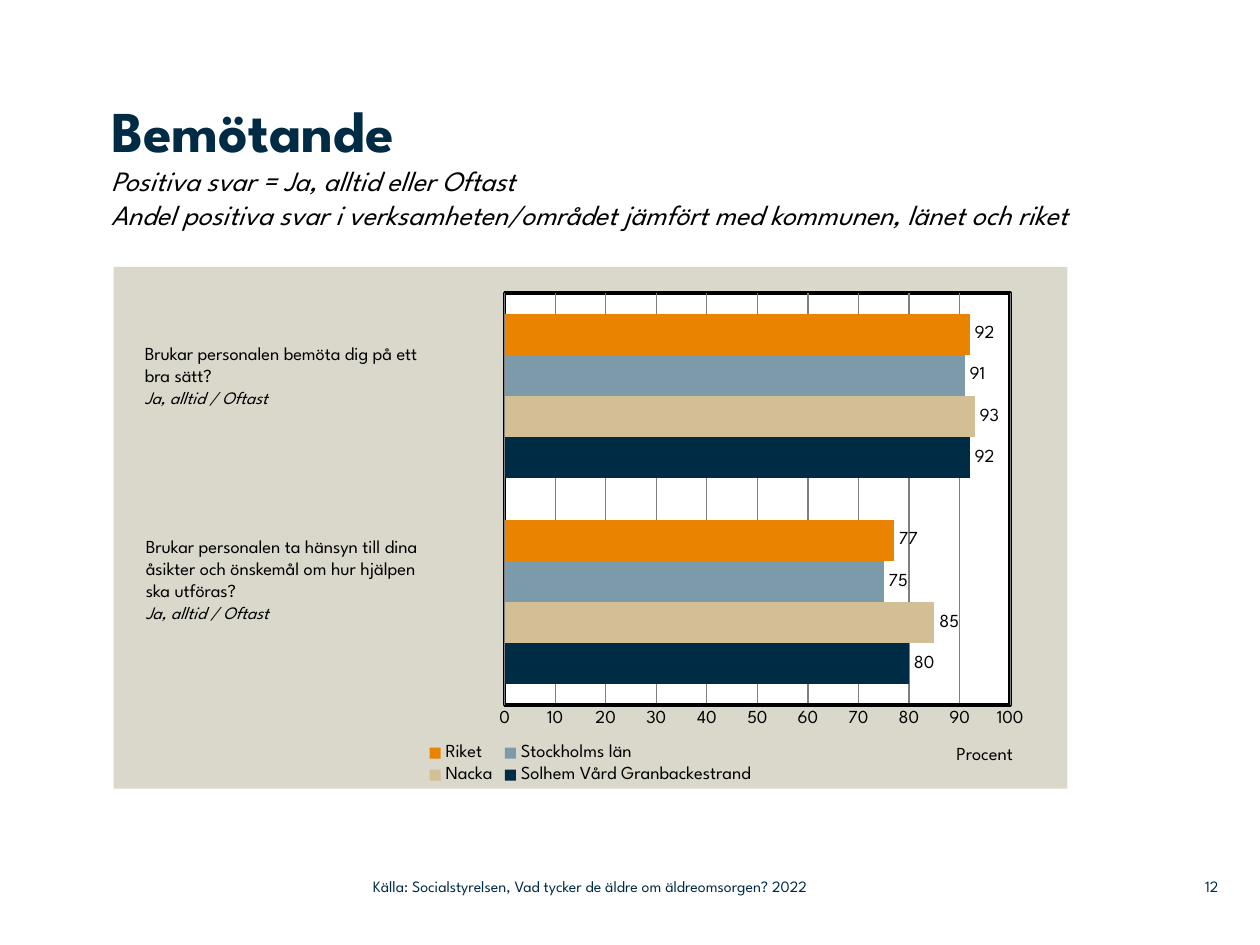
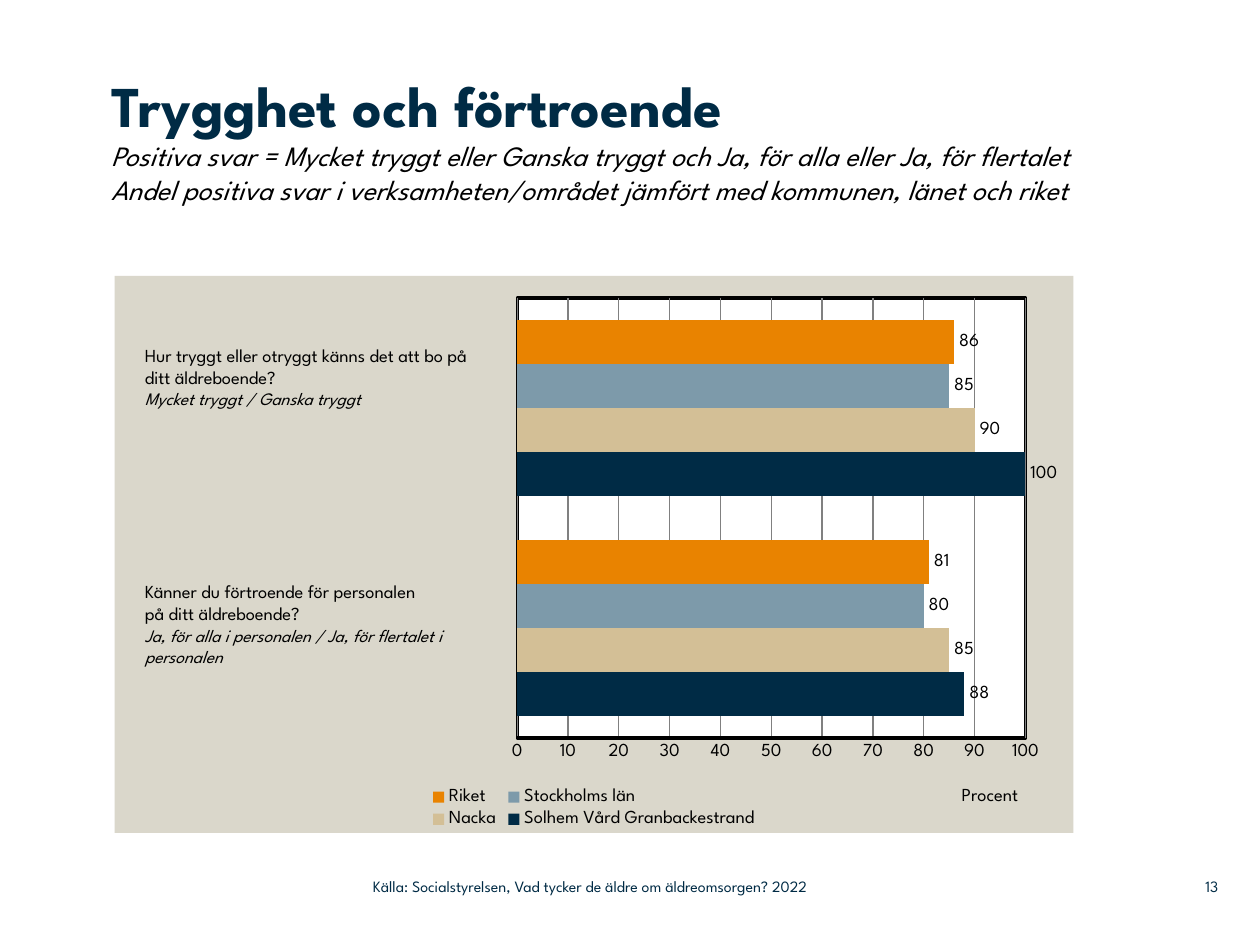
import pptx
import pptx.chart.data
import pptx.dml.color
import pptx.enum.chart
import pptx.enum.text
import pptx.oxml
import pptx.oxml.ns
import pptx.util

Cm = pptx.util.Cm
Pt = pptx.util.Pt
RGBColor = pptx.dml.color.RGBColor
qn = pptx.oxml.ns.qn
Anchor = pptx.enum.text.MSO_ANCHOR
Align = pptx.enum.text.PP_ALIGN

FONT = "League Spartan"
NAVY = RGBColor(0x00, 0x2B, 0x45)
BLACK = RGBColor(0x00, 0x00, 0x00)
WHITE = RGBColor(0xFF, 0xFF, 0xFF)
GREY = RGBColor(0x80, 0x80, 0x80)
STONE = RGBColor(0xDA, 0xD7, 0xCB)
SAND = RGBColor(0xD3, 0xBF, 0x96)
STEEL = RGBColor(0x7D, 0x9A, 0xAA)
ORANGE = RGBColor(0xE9, 0x83, 0x00)

SERIES = (
    ("Solhem Vård Granbackestrand", NAVY),
    ("Nacka", SAND),
    ("Stockholms län", STEEL),
    ("Riket", ORANGE),
)
COMPARISON = "Andel positiva svar i verksamheten/området jämfört med kommunen, länet och riket"
SOURCE = "Källa: Socialstyrelsen, Vad tycker de äldre om äldreomsorgen? 2022"
AXIS_TITLE_PLACE = (0.88, 0.91)


def set_font(font, size, color=BLACK, bold=False, italic=False):
    font.name = FONT
    font.size = Pt(size)
    font.color.rgb = color
    font.bold = bold
    font.italic = italic


def add_text_box(slide, box, margins=True, anchor=Anchor.TOP):
    """Return the empty text frame of a new box; box is left, top, width, height in cm."""
    frame = slide.shapes.add_textbox(*map(Cm, box)).text_frame
    frame.word_wrap = True
    frame.vertical_anchor = anchor
    if not margins:
        frame.margin_left = frame.margin_right = 0
        frame.margin_top = frame.margin_bottom = 0
    return frame


def add_text(frame, text, align=Align.LEFT, **font_format):
    """Write text as the next paragraph of the frame."""
    first = frame.paragraphs[0]
    paragraph = frame.add_paragraph() if first.runs else first
    paragraph.alignment = align
    run = paragraph.add_run()
    run.text = text
    set_font(run.font, **font_format)


def add_title(slide, box, title, positive_answers):
    frame = add_text_box(slide, box, margins=False)
    add_text(frame, title, size=33, color=NAVY, bold=True)
    for line in (positive_answers, COMPARISON):
        add_text(frame, line, size=16, italic=True)


def add_question(slide, box, lines, answers):
    frame = add_text_box(slide, box)
    for line in lines:
        add_text(frame, line, size=10.5)
    add_text(frame, answers, size=10, italic=True)


def add_footer(slide, number):
    source = add_text_box(slide, (7.52, 17.5, 11.25, 0.74), margins=False, anchor=Anchor.MIDDLE)
    add_text(source, SOURCE, size=9, color=NAVY)
    page = add_text_box(slide, (23.37, 17.5, 1.19, 0.74), margins=False, anchor=Anchor.MIDDLE)
    add_text(page, str(number), align=Align.RIGHT, size=9, color=NAVY)


def set_layout(element, target=None, **fractions):
    """Place a chart part by fractions of the chart area."""
    layout = element.find(qn("c:layout"))
    if layout is None:
        layout = element.makeelement(qn("c:layout"), {})
        element.insert(0 if element.find(qn("c:tx")) is None else 1, layout)
    settings = {"layoutTarget": target} if target else {}
    settings.update({f"{key}Mode": "edge" for key in ("x", "y")})
    settings.update(fractions)
    manual = layout.makeelement(qn("c:manualLayout"), {})
    layout.append(manual)
    for name, value in settings.items():
        manual.append(manual.makeelement(qn(f"c:{name}"), {"val": str(value)}))


def area_format(fill, line=None):
    """Return shape properties for a chart area, with a 2 pt line or none."""
    outline = (
        f'<a:ln w="{Pt(2)}"><a:solidFill><a:srgbClr val="{line}"/></a:solidFill></a:ln>'
        if line is not None
        else "<a:ln><a:noFill/></a:ln>"
    )
    return pptx.oxml.parse_xml(
        f'<c:spPr {pptx.oxml.ns.nsdecls("c", "a")}><a:solidFill>'
        f'<a:srgbClr val="{fill}"/></a:solidFill>{outline}</c:spPr>'
    )


def format_value_axis(axis):
    axis.minimum_scale, axis.maximum_scale, axis.major_unit = 0, 100, 10
    axis.major_tick_mark = axis.minor_tick_mark = pptx.enum.chart.XL_TICK_MARK.NONE
    axis.format.line.color.rgb = BLACK
    axis.format.line.width = Pt(2)
    axis.has_major_gridlines = True
    axis.major_gridlines.format.line.color.rgb = GREY
    axis.major_gridlines.format.line.width = Pt(0.75)
    set_font(axis.tick_labels.font, 10.5)
    add_text(axis.axis_title.text_frame, "Procent", size=10.5)
    left, top = AXIS_TITLE_PLACE
    set_layout(axis.axis_title.element, x=left, y=top)


def add_answer_chart(slide, box, plot_box, values):
    """Add a bar chart; values has one pair of percentages per entry in SERIES."""
    data = pptx.chart.data.CategoryChartData()
    data.categories = ["1", "2"]
    for (name, _), pair in zip(SERIES, values):
        data.add_series(name, pair)
    chart = slide.shapes.add_chart(
        pptx.enum.chart.XL_CHART_TYPE.BAR_CLUSTERED, *map(Cm, box), data
    ).chart
    set_font(chart.font, 10.5)
    chart.has_title = False
    chart.has_legend = True
    chart.legend.position = pptx.enum.chart.XL_LEGEND_POSITION.BOTTOM
    chart.legend.include_in_layout = False
    set_font(chart.legend.font, 10.5)
    chart.category_axis.visible = False
    format_value_axis(chart.value_axis)

    plot = chart.plots[0]
    plot.gap_width = 100
    plot.vary_by_categories = False
    for series, (_, color) in zip(plot.series, SERIES):
        series.format.fill.solid()
        series.format.fill.fore_color.rgb = color
        series.format.line.fill.background()
        labels = series.data_labels
        labels.show_value = True
        labels.position = pptx.enum.chart.XL_LABEL_POSITION.OUTSIDE_END
        set_font(labels.font, 10.5)

    chart_body = chart.element.find(qn("c:chart"))
    chart_body.addnext(area_format(STONE))
    plot_area = chart_body.find(qn("c:plotArea"))
    plot_area.append(area_format(WHITE, BLACK))
    left, top, width, height = plot_box
    set_layout(plot_area, "inner", x=left, y=top, w=width, h=height)


def add_treatment_slide(slide):
    add_title(slide, (2.24, 1.91, 20.42, 3.05), "Bemötande",
              "Positiva svar = Ja, alltid eller Oftast")
    add_answer_chart(slide, (2.29, 5.38, 19.23, 10.52), (0.41, 0.05, 0.53, 0.79),
                     ((80, 92), (85, 93), (75, 91), (77, 92)))
    add_question(slide, (2.67, 6.78, 7.54, 2.06),
                 ("Brukar personalen bemöta dig på ett", "bra sätt?"),
                 "Ja, alltid / Oftast")
    add_question(slide, (2.69, 10.67, 7.65, 2.49),
                 ("Brukar personalen ta hänsyn till dina",
                  "åsikter och önskemål om hur hjälpen", "ska utföras?"),
                 "Ja, alltid / Oftast")
    add_footer(slide, 12)


def add_trust_slide(slide):
    add_title(slide, (2.24, 1.4, 19.69, 4.17), "Trygghet och förtroende",
              "Positiva svar = Mycket tryggt eller Ganska tryggt och "
              "Ja, för alla eller Ja, för flertalet")
    add_answer_chart(slide, (2.31, 5.56, 19.33, 11.23), (0.42, 0.04, 0.53, 0.79),
                     ((88, 100), (85, 90), (80, 85), (81, 86)))
    add_question(slide, (2.67, 6.81, 7.57, 2.06),
                 ("Hur tryggt eller otryggt känns det att bo på ditt äldreboende?",),
                 "Mycket tryggt / Ganska tryggt")
    add_question(slide, (2.67, 11.58, 7.62, 2.49),
                 ("Känner du förtroende för personalen", "på ditt äldreboende?"),
                 "Ja, för alla i personalen / Ja, för flertalet i personalen")
    add_footer(slide, 13)


def main():
    presentation = pptx.Presentation()
    presentation.slide_width = Cm(25.4)
    presentation.slide_height = Cm(19.05)
    blank = presentation.slide_layouts[6]
    for fill_slide in (add_treatment_slide, add_trust_slide):
        fill_slide(presentation.slides.add_slide(blank))
    presentation.save("out.pptx")


if __name__ == "__main__":
    main()
